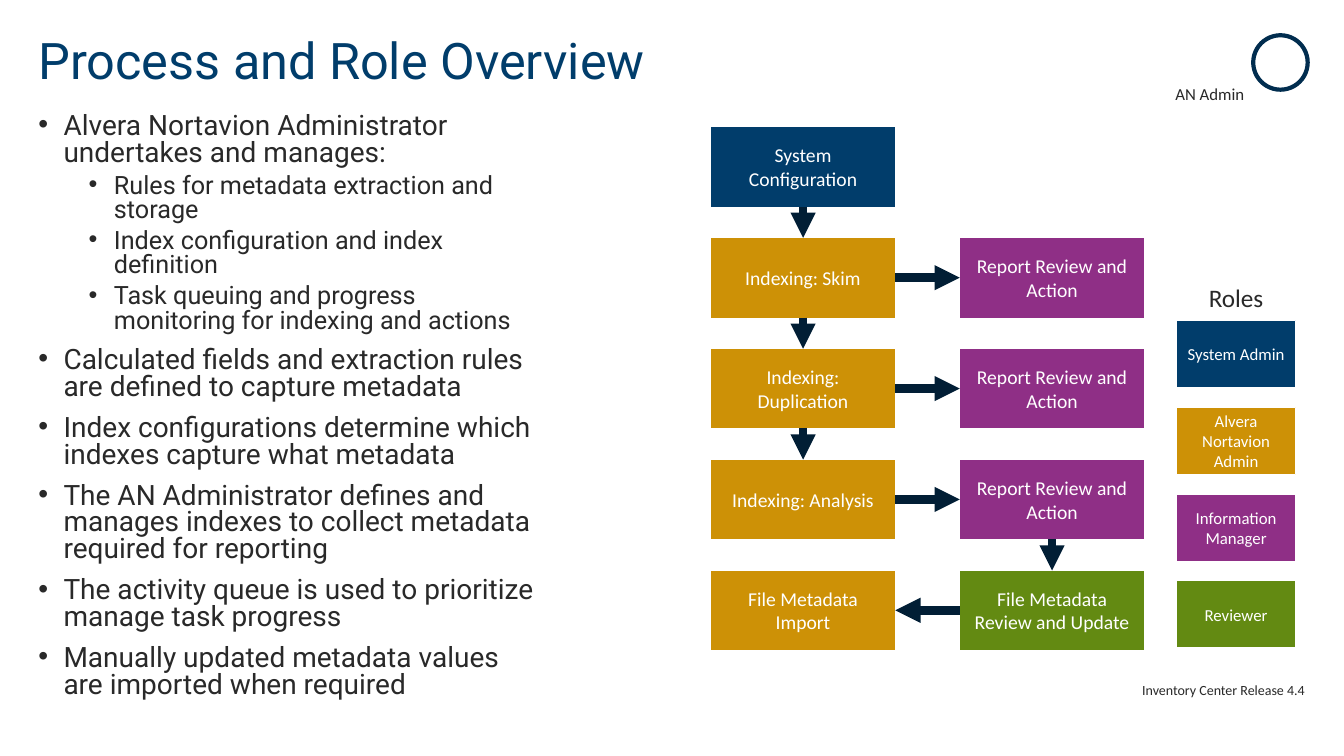
from dataclasses import dataclass

from lxml.etree import SubElement
from pptx import Presentation
from pptx.dml.color import RGBColor
from pptx.enum.shapes import MSO_CONNECTOR, MSO_SHAPE
from pptx.enum.text import MSO_ANCHOR, MSO_AUTO_SIZE, PP_ALIGN
from pptx.oxml.ns import qn
from pptx.util import Inches, Pt

NAVY, GOLD, PURPLE, GREEN = "013D6B", "CD9106", "8F2F86", "638A12"
INK, WHITE, ARROW, RING = "292929", "FFFFFF", "011E35", "012D4F"

# Flow grid and role legend
COLUMNS = (7.05, 9.52)
ROW_TOP, ROW_PITCH = 1.26, 1.1
STEP_SIZE = (1.83, 0.79)
ROLE_LEFT, ROLE_TOP, ROLE_PITCH = 11.67, 3.18, 0.86
ROLE_SIZE = (1.18, 0.67)

# Connection sites of a process box
TOP, LEFT, BOTTOM, RIGHT = range(4)


@dataclass
class Step:
    text: str
    color: str
    col: int
    row: int


@dataclass
class Arrow:
    start: tuple
    start_site: int
    end: tuple
    end_site: int


STEPS = [
    Step("System Configuration", NAVY, 0, 0),
    Step("Indexing: Skim", GOLD, 0, 1),
    Step("Indexing: Duplication", GOLD, 0, 2),
    Step("Indexing: Analysis", GOLD, 0, 3),
    Step("File Metadata Import", GOLD, 0, 4),
    *(Step("Report Review and Action", PURPLE, 1, row) for row in (1, 2, 3)),
    Step("File Metadata Review and Update", GREEN, 1, 4),
]
ARROWS = [
    *(Arrow((0, row), BOTTOM, (0, row + 1), TOP) for row in range(3)),
    *(Arrow((0, row), RIGHT, (1, row), LEFT) for row in (1, 2, 3)),
    Arrow((1, 3), BOTTOM, (1, 4), TOP),
    Arrow((1, 4), LEFT, (0, 4), RIGHT),
]
ROLES = [
    ("System Admin", NAVY),
    ("Alvera Nortavion Admin", GOLD),
    ("Information Manager", PURPLE),
    ("Reviewer", GREEN),
]
BULLETS = [
    (0, "Alvera Nortavion Administrator undertakes and manages:"),
    (1, "Rules for metadata extraction and storage"),
    (1, "Index configuration and index definition"),
    (1, "Task queuing and progress monitoring for indexing and actions"),
    (0, "Calculated fields and extraction rules are defined to capture metadata"),
    (0, "Index configurations determine which indexes capture what metadata"),
    (0, "The AN Administrator defines and manages indexes to collect metadata "
        "required for reporting"),
    (0, "The activity queue is used to prioritize manage task progress"),
    (0, "Manually updated metadata values are imported when required"),
]


def rgb(value: str) -> RGBColor:
    return RGBColor.from_string(value)


def write(p, text: str, *, size=14, font="Calibri", color=INK,
          align=PP_ALIGN.LEFT, spacing=1.0, before=0) -> None:
    p.alignment = align
    p.line_spacing = spacing
    p.space_before = Pt(before)
    r = p.add_run()
    r.text = text
    r.font.size = Pt(size)
    r.font.name = font
    r.font.color.rgb = rgb(color)


def place(sp, left: float, top: float, width: float, height: float) -> None:
    sp.left, sp.top = Inches(left), Inches(top)
    sp.width, sp.height = Inches(width), Inches(height)


def add_label(slide, text: str, box: tuple, wrap=True, **fmt) -> None:
    tf = slide.shapes.add_textbox(*map(Inches, box)).text_frame
    tf.word_wrap = wrap
    write(tf.paragraphs[0], text, **fmt)


def add_box(slide, text: str, color: str, box: tuple, size: int, line=None):
    sp = slide.shapes.add_shape(MSO_SHAPE.FLOWCHART_PROCESS, *map(Inches, box))
    sp.shadow.inherit = False
    sp.fill.solid()
    sp.fill.fore_color.rgb = rgb(color)
    if line:
        sp.line.color.rgb = rgb(line)
        sp.line.width = Pt(1)
    else:
        sp.line.fill.background()
    tf = sp.text_frame
    tf.word_wrap = True
    tf.vertical_anchor = MSO_ANCHOR.MIDDLE
    write(tf.paragraphs[0], text, size=size, color=WHITE, align=PP_ALIGN.CENTER)
    return sp


def add_arrow(slide, arrow: Arrow, boxes: dict) -> None:
    cx = slide.shapes.add_connector(MSO_CONNECTOR.STRAIGHT, 0, 0, 0, 0)
    cx.begin_connect(boxes[arrow.start], arrow.start_site)
    cx.end_connect(boxes[arrow.end], arrow.end_site)
    cx.line.color.rgb = rgb(ARROW)
    cx.line.width = Pt(6)
    SubElement(cx.line._get_or_add_ln(), qn("a:tailEnd"), type="triangle")
    SubElement(cx._element.spPr, qn("a:effectLst"))


def add_bullet(p, level: int, text: str) -> None:
    p.level = level
    pPr = p._p.get_or_add_pPr()
    pPr.set("marL", str(Inches((0.25, 0.75)[level])))
    pPr.set("indent", str(Inches(-0.25)))
    SubElement(pPr, qn("a:buFont"), typeface="Arial")
    SubElement(pPr, qn("a:buChar"), char="•")


def main() -> None:
    prs = Presentation()
    prs.slide_width, prs.slide_height = Inches(13.33), Inches(7.5)
    s = prs.slides.add_slide(prs.slide_layouts[1])

    # Title
    title = s.shapes.title
    place(title, 0.28, 0.28, 10.55, 0.69)
    tf = title.text_frame
    tf.auto_size = MSO_AUTO_SIZE.NONE
    tf.vertical_anchor = MSO_ANCHOR.MIDDLE
    write(tf.paragraphs[0], "Process and Role Overview", size=36,
          font="Roboto", color=NAVY, spacing=0.9)

    # Bulleted list
    body = s.placeholders[1]
    place(body, 0.28, 1.08, 5.12, 5.67)
    tf = body.text_frame
    tf.auto_size = MSO_AUTO_SIZE.NONE
    for i, (level, text) in enumerate(BULLETS):
        p = tf.add_paragraph() if i else tf.paragraphs[0]
        add_bullet(p, level, text)
        write(p, text, size=(20, 18)[level], font="Roboto", spacing=0.8,
              before=(10, 5)[level] if i else 0)

    # Corner mark and footer
    ring = s.shapes.add_shape(MSO_SHAPE.OVAL, 0, 0, 0, 0)
    place(ring, 12.43, 0.35, 0.54, 0.54)
    ring.shadow.inherit = False
    ring.fill.background()
    ring.line.color.rgb = rgb(RING)
    ring.line.width = Pt(3)
    add_label(s, "AN Admin", (11.38, 0.78, 1.24, 0.3), size=12,
              align=PP_ALIGN.CENTER)
    add_label(s, "Inventory Center Release 4.4", (11.23, 6.71, 1.85, 0.27),
              wrap=False, size=10)

    # Process flow
    boxes = {}
    for step in STEPS:
        box = (COLUMNS[step.col], ROW_TOP + step.row * ROW_PITCH, *STEP_SIZE)
        boxes[step.col, step.row] = add_box(s, step.text, step.color, box, 14)
    for arrow in ARROWS:
        add_arrow(s, arrow, boxes)

    # Role legend
    add_label(s, "Roles", (11.89, 2.75, 0.75, 0.4), wrap=False, size=18)
    for i, (role, color) in enumerate(ROLES):
        box = (ROLE_LEFT, ROLE_TOP + i * ROLE_PITCH, *ROLE_SIZE)
        add_box(s, role, color, box, 12, line=WHITE)

    prs.save("out.pptx")


if __name__ == "__main__":
    main()
